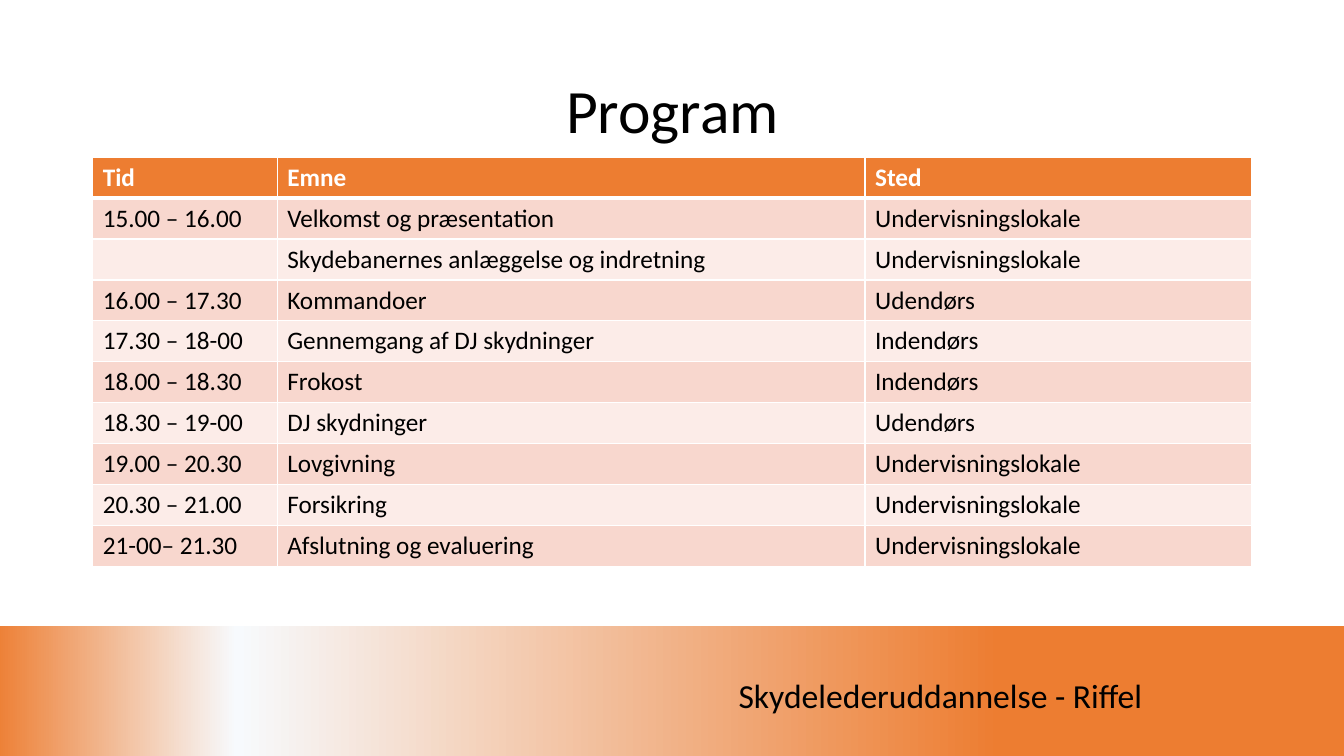
from lxml import etree
from pptx import Presentation
from pptx import util as u
from pptx.dml.color import RGBColor
from pptx.enum import shapes, text
from pptx.oxml.ns import qn

ORANGE, WHITE, BLACK = "ED7D31", "FFFFFF", "000000"
BANDS = ("F8D7CE", "FCECE8")
GRADIENT = ((0, ORANGE), (18, "F7FAFD"), (74, ORANGE), (100, ORANGE))
COLUMNS = (1.83, 5.83, 3.83)
ROOM = "Undervisningslokale"
PROGRAM = (
    ("Tid", "Emne", "Sted"),
    ("15.00 – 16.00", "Velkomst og præsentation", ROOM),
    ("", "Skydebanernes anlæggelse og indretning", ROOM),
    ("16.00 – 17.30", "Kommandoer", "Udendørs"),
    ("17.30 – 18-00", "Gennemgang af DJ skydninger", "Indendørs"),
    ("18.00 – 18.30", "Frokost", "Indendørs"),
    ("18.30 – 19-00", "DJ skydninger", "Udendørs"),
    ("19.00 – 20.30", "Lovgivning", ROOM),
    ("20.30 – 21.00", "Forsikring", ROOM),
    ("21-00– 21.30", "Afslutning og evaluering", ROOM),
)


def color(value):
    return RGBColor.from_string(value)


def add_color(parent, value):
    etree.SubElement(parent, qn("a:srgbClr"), val=value)


class Deck:
    font = "Calibri"

    def __init__(self):
        self.prs = Presentation()
        self.prs.slide_width = u.Inches(13.33)
        self.prs.slide_height = u.Inches(7.5)
        self.s = self.prs.slides.add_slide(self.prs.slide_layouts[5])

    def style(self, p, size, hex_color, bold=False):
        for r in p.runs:
            r.font.name = self.font
            r.font.size = u.Pt(size)
            r.font.bold = bold
            r.font.color.rgb = color(hex_color)

    def banner(self, label, left, top, width, height):
        sp = self.s.shapes.add_shape(
            shapes.MSO_SHAPE.RECTANGLE, *map(u.Inches, (left, top, width, height)))
        sp.shadow.inherit = False
        sp.fill.gradient()
        sp.fill.gradient_angle = 0
        stops = sp._element.spPr.find(".//" + qn("a:gsLst"))
        for stop in list(stops):
            stops.remove(stop)
        for position, value in GRADIENT:
            add_color(etree.SubElement(stops, qn("a:gs"), pos=str(position * 1000)), value)
        sp.line.color.rgb = color(WHITE)
        sp.line.width = u.Pt(1.5)
        tf = sp.text_frame
        tf.text = label
        tf.margin_right = u.Inches(2.11)
        tf.vertical_anchor = text.MSO_ANCHOR.MIDDLE
        p = tf.paragraphs[0]
        p.alignment = text.PP_ALIGN.RIGHT
        self.style(p, 24, BLACK)

    def title(self, label, left, top, width, height):
        sp = self.s.shapes.title
        sp.left, sp.top, sp.width, sp.height = map(u.Inches, (left, top, width, height))
        tf = sp.text_frame
        tf.text = label
        tf.auto_size = text.MSO_AUTO_SIZE.NONE
        tf.vertical_anchor = text.MSO_ANCHOR.MIDDLE
        p = tf.paragraphs[0]
        p.alignment = text.PP_ALIGN.CENTER
        p.line_spacing = 0.9
        self.style(p, 44, BLACK)

    def borders(self, cell, top, bottom):
        tc_pr = cell._tc.get_or_add_tcPr()
        for side, width in (("L", 1), ("R", 1), ("T", top), ("B", bottom)):
            ln = etree.SubElement(tc_pr, qn("a:ln" + side), w=str(u.Pt(width)))
            add_color(etree.SubElement(ln, qn("a:solidFill")), WHITE)

    def table(self, rows, columns, left, top, height):
        table = self.s.shapes.add_table(
            len(rows), len(columns),
            *map(u.Inches, (left, top, sum(columns), height))).table
        for column, width in zip(table.columns, columns):
            column.width = u.Inches(width)
        for i, row in enumerate(rows):
            header = i == 0
            for j, label in enumerate(row):
                cell = table.cell(i, j)
                self.borders(cell, 3 if i == 1 else 1, 3 if header else 1)
                cell.fill.solid()
                cell.fill.fore_color.rgb = color(ORANGE if header else BANDS[(i - 1) % 2])
                cell.text_frame.text = label
                self.style(cell.text_frame.paragraphs[0], 18,
                           WHITE if header else BLACK, header)


def main():
    deck = Deck()
    deck.banner("Skydelederuddannelse - Riffel", -0.09, 6.2, 13.53, 1.4)
    deck.title("Program", 0.92, 0.4, 11.5, 1.45)
    deck.table(PROGRAM, COLUMNS, 0.92, 1.56, 4.06)
    deck.prs.save("out.pptx")


if __name__ == "__main__":
    main()
